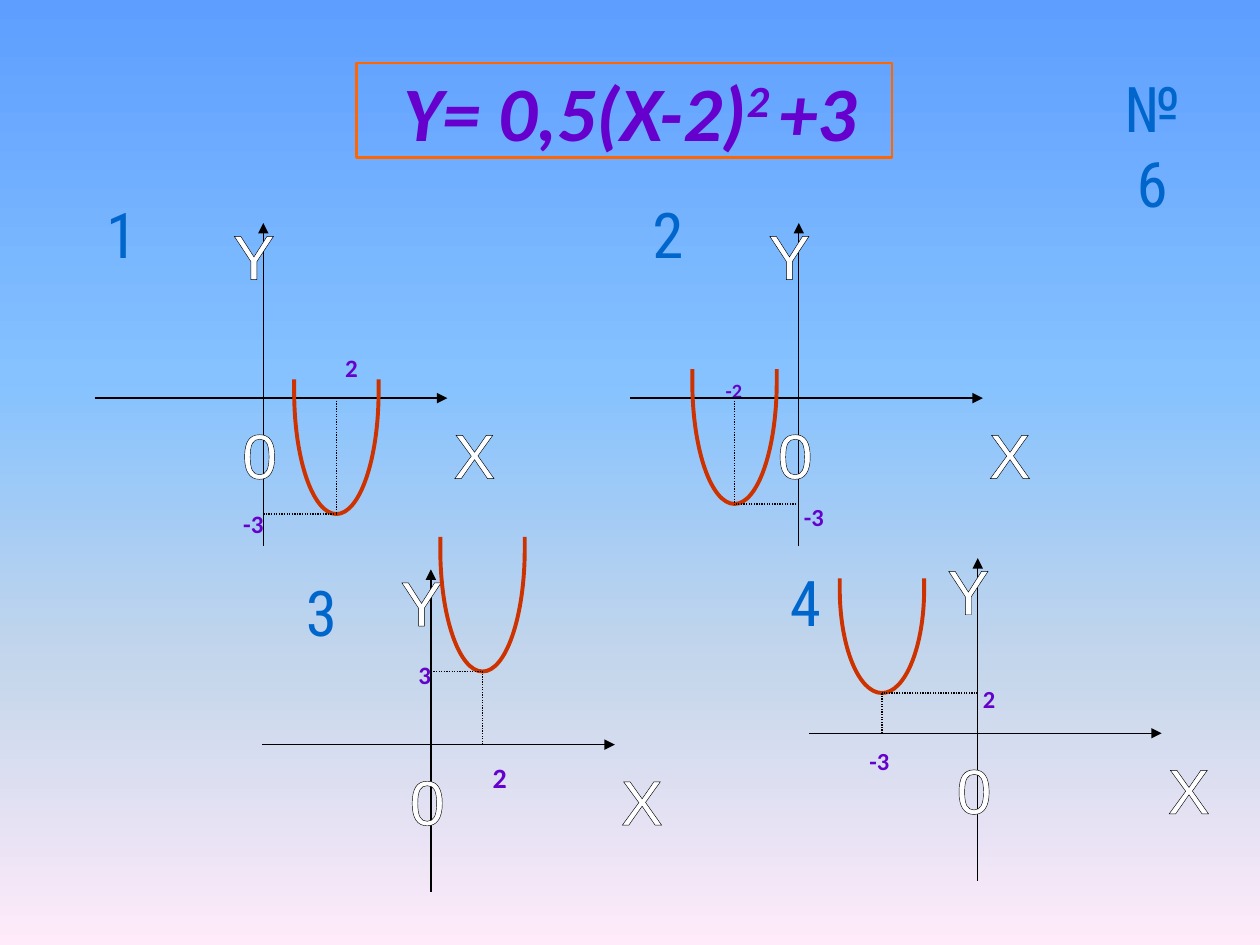
from pptx import Presentation
from pptx.dml.color import RGBColor
from pptx.enum.dml import MSO_LINE
from pptx.enum.shapes import MSO_CONNECTOR, MSO_SHAPE
from pptx.enum.text import MSO_ANCHOR, MSO_AUTO_SIZE, PP_ALIGN
from pptx.oxml import parse_xml
from pptx.oxml.ns import nsdecls, qn
from pptx.util import Inches, Pt

DOT = MSO_LINE.ROUND_DOT
LINE = MSO_CONNECTOR.STRAIGHT
RECT = MSO_SHAPE.RECTANGLE
MIDDLE = MSO_ANCHOR.MIDDLE
FIT = MSO_AUTO_SIZE.SHAPE_TO_FIT_TEXT
CENTER = PP_ALIGN.CENTER

COLORS = {
    "axis": "000000",
    "letter": "FFFFFF",
    "curve": "CC3300",
    "label": "6600CC",
    "number": "0066CC",
    "glow": "99CCFF",
    "frame": "FF6600",
}
SKY = [(0, "5E9EFF"), (40, "85C2FF"), (70, "C4D6EB"), (100, "FFEBFA")]

# Number and its place, plot corner, vertex, curve height
PLOTS = [
    (("1", 0.75, 1.5, 0.19), (0.75, 1.67), (2.67, 4.08), 1.08),
    (("2", 5.08, 1.5, 0.25), (5, 1.67), (5.83, 4), 1.08),
    (("3", 2.33, 4.5, 0.26), (2.08, 4.42), (3.83, 5.33), 1.08),
    (("4", 6.17, 4.42, 0.25), (6.42, 4.33), (7, 5.5), 0.92),
]
# Box, then text, left edge, middle and size of each value
COLUMNS = [
    ((0.58, 1.67, 3.92, 5.67),
     [("2", 2.74, 2.92, 14.3), ("-3", 1.93, 4.16, 14.3),
      ("3", 3.32, 5.36, 14.3), ("2", 3.91, 6.19, 16)]),
    ((5.67, 1.58, 4, 5.5),
     [("-2", 5.76, 3.08, 11.6), ("-3", 6.38, 4.1, 14),
      ("2", 7.8, 5.55, 14), ("-3", 6.9, 6.04, 14)]),
]


def rgb(name):
    """Return the named colour."""
    return RGBColor.from_string(COLORS[name])


def paint_sky(slide):
    """Give the slide its vertical gradient."""
    stops = "".join(
        f'<a:gs pos="{pos * 1000}"><a:srgbClr val="{color}"/></a:gs>'
        for pos, color in SKY)
    slide._element.cSld.insert(0, parse_xml(
        f'<p:bg {nsdecls("p", "a")}><p:bgPr><a:gradFill><a:gsLst>{stops}</a:gsLst>'
        '<a:lin ang="5400000" scaled="0"/></a:gradFill><a:effectLst/></p:bgPr></p:bg>'))


def add_frame(slide, box):
    """Add a text box and return its frame."""
    return slide.shapes.add_textbox(*map(Inches, box)).text_frame


def set_font(para, size, font, color):
    """Set size, typeface and colour of a paragraph."""
    para.font.size = Pt(size)
    para.font.name = font
    para.font.color.rgb = rgb(color)


def add_art(slide, text, box, font, color, edge, width):
    """Add large outlined lettering."""
    frame = add_frame(slide, box)
    frame.word_wrap = False
    frame.auto_size = FIT
    para = frame.paragraphs[0]
    para.alignment = CENTER
    set_font(para, 36, font, color)
    run = para.add_run()
    run.text = text
    run.font.color.rgb = rgb(color)
    run._r.get_or_add_rPr().insert(0, parse_xml(
        f'<a:ln {nsdecls("a")} w="{Pt(width)}"><a:solidFill>'
        f'<a:srgbClr val="{COLORS[edge]}"/></a:solidFill></a:ln>'))


def add_number(slide, text, x, y, width):
    """Add a blue number."""
    add_art(slide, text, (x, y, width, 0.62), "Roboto Condensed", "number", "glow", 1.5)


def add_line(slide, start, end, arrow=None):
    """Add an axis with an arrowhead, or a dotted guide without one."""
    line = slide.shapes.add_connector(LINE, *map(Inches, (*start, *end)))
    line.line.color.rgb = rgb("axis")
    line.line.width = Pt(0.75)
    if arrow:
        line.line._get_or_add_ln().append(
            parse_xml(f'<a:{arrow} {nsdecls("a")} type="triangle"/>'))
    else:
        line.line.dash_style = DOT
    line._element.spPr.append(parse_xml(f'<a:effectLst {nsdecls("a")}/>'))


def add_axes(slide, x, y):
    """Add both axes and their letters."""
    add_line(slide, (x + 1.34, y + 0.1), (x + 1.34, y + 2.66), "headEnd")
    add_line(slide, (x, y + 1.49), (x + 2.8, y + 1.49), "tailEnd")
    for text, dx, dy, width, height in (
            ("X", 2.75, 1.58, 0.2, 0.13),
            ("Y", 1, 0, 0.31, 0.18),
            ("0", 1.08, 1.58, 0.19, 0.19)):
        add_art(slide, text, (x + dx, y + dy, width, height),
                "Arial", "letter", "axis", 0.75)


def add_curve(slide, x, y, height):
    """Add a smooth cup with its lowest point at x, y."""
    half = 0.335
    left = [(-1, 0.99), (-1, 0.96), (-1, 0.93), (-1, 0.9), (-1, 0.4), (-0.55, 0)]
    right = [(-dx, dy) for dx, dy in reversed(left)]
    points = [(Inches(x + half * dx), Inches(y - height * dy))
              for dx, dy in (*left, (0, 0), *right)]
    pen = slide.shapes.build_freeform(*points[0])
    pen.add_line_segments(points[1:], close=False)
    curve = pen.convert_to_shape()
    steps = list(curve._element.iter(qn("a:lnTo")))
    for i in range(0, len(steps), 3):
        bend = parse_xml(f'<a:cubicBezTo {nsdecls("a")}/>')
        steps[i].addprevious(bend)
        for step in steps[i:i + 3]:
            bend.append(step[0])
            step.getparent().remove(step)
    curve.shadow.inherit = False
    curve.fill.background()
    curve.line.color.rgb = rgb("curve")
    curve.line.width = Pt(2.25)


def add_values(slide, box, values):
    """Add a column of values, each set by its indent and the space above."""
    row = 0.25
    frame = add_frame(slide, box)
    frame.word_wrap = True
    frame.margin_left = frame.margin_right = 0
    last = values[0][2] - row
    frame.margin_top = Inches(last + row / 2 - 0.01 - box[1])
    for i, (text, x, y, size) in enumerate(values):
        para = frame.add_paragraph() if i else frame.paragraphs[0]
        set_font(para, size, "Calibri", "label")
        para.font.bold = True
        para.line_spacing = Inches(row)
        para.space_before = Inches(y - last - row)
        para._p.get_or_add_pPr().set("marL", str(Inches(x - box[0])))
        para.add_run().text = text
        last = y


def add_plot(slide, number, corner, vertex, height):
    """Add one numbered graph."""
    x, y = corner
    add_axes(slide, x, y)
    add_curve(slide, *vertex, height)
    add_line(slide, (vertex[0], y + 1.49), vertex)
    add_line(slide, (x + 1.34, vertex[1]), vertex)
    add_number(slide, *number)


def add_title(slide):
    """Add the framed formula."""
    text = add_frame(slide, (0.75, 0.25, 8.5, 1.25))
    text.word_wrap = True
    text.vertical_anchor = MIDDLE
    para = text.paragraphs[0]
    para.alignment = CENTER
    set_font(para, 44, "Calibri", "label")
    para.font.bold = para.font.italic = True
    for part, lift in (("Y= 0,5(X-2)", 0), ("2 ", 30000), ("+3", 0)):
        run = para.add_run()
        run.text = part
        props = run._r.get_or_add_rPr()
        props.set("kern", "0")
        props.set("baseline", str(lift))
    frame = slide.shapes.add_shape(RECT, *map(Inches, (2.83, 0.5, 4.25, 0.75)))
    frame.shadow.inherit = False
    frame.fill.background()
    frame.line.color.rgb = rgb("frame")
    frame.line.width = Pt(1.5)


def main():
    """Build and save the slide."""
    deck = Presentation()
    deck.slide_width, deck.slide_height = Inches(10), Inches(7.5)
    slide = deck.slides.add_slide(deck.slide_layouts[6])
    paint_sky(slide)
    add_title(slide)
    for column in COLUMNS:
        add_values(slide, *column)
    for plot in PLOTS:
        add_plot(slide, *plot)
    add_number(slide, "№ 6", 8.75, 0.5, 0.79)
    deck.save("out.pptx")


if __name__ == "__main__":
    main()
